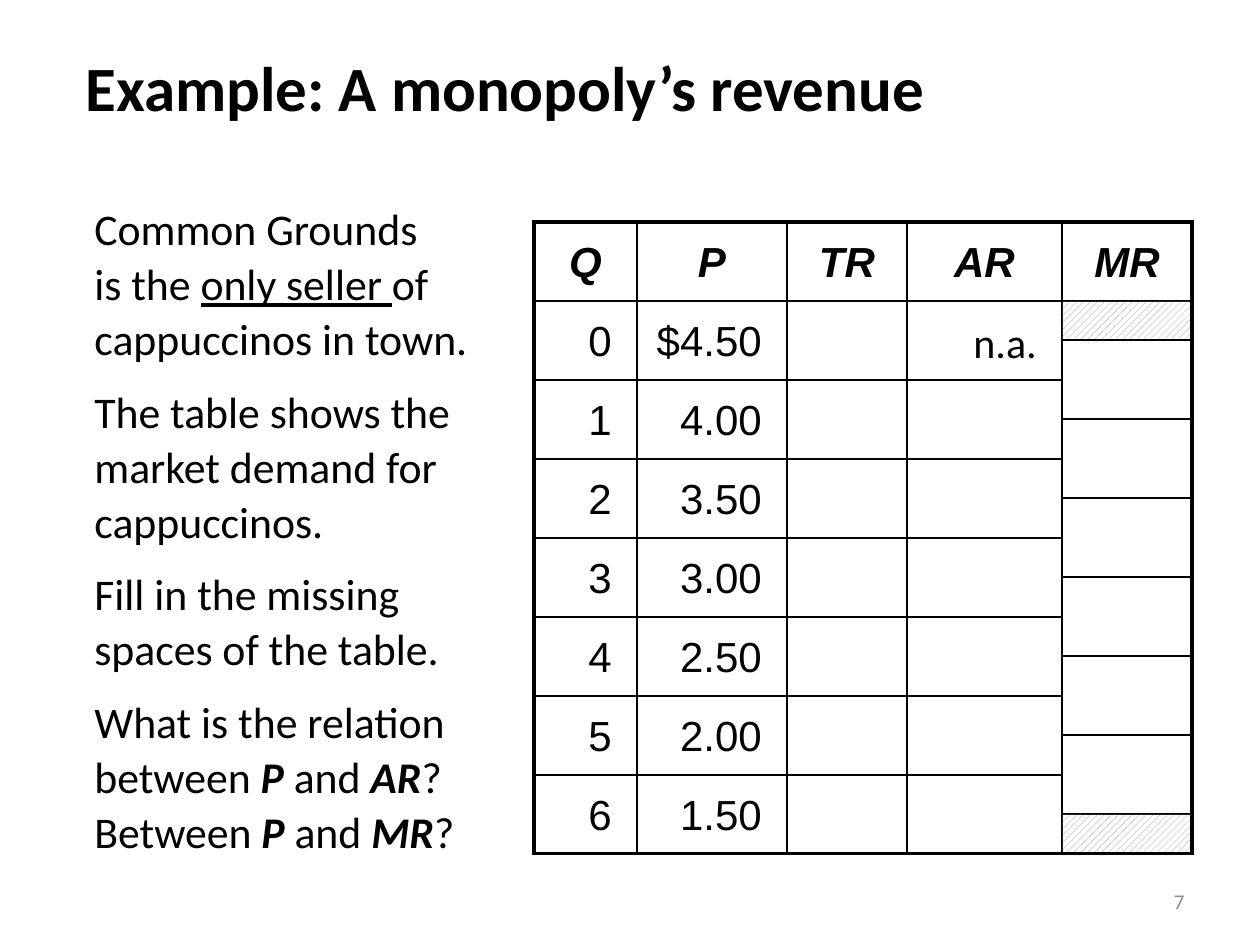
import pptx
import pptx.util
import pptx.oxml
from pptx.dml.color import RGBColor
from pptx.enum.dml import MSO_PATTERN
from pptx.enum.shapes import MSO_SHAPE
from pptx.enum.text import MSO_ANCHOR, PP_ALIGN
from pptx.oxml.ns import nsdecls

PX = 914400 / 126
COLORS = {"ink": "000000", "paper": "FFFFFF", "hatch": "969696", "number": "8C8C8C"}

TITLE = "Example: A monopoly’s revenue"
# Each paragraph is a list of (text, style): "u" underlined, "bi" bold italic
BODY = [
    [("Common Grounds \nis the ", ""), ("only seller ", "u"),
     ("of cappuccinos in town.", "")],
    [("The table shows the market demand for cappuccinos.", "")],
    [("Fill in the missing spaces of the table.", "")],
    [("What is the relation between ", ""), ("P", "bi"), (" and ", ""), ("AR", "bi"),
     ("? Between ", ""), ("P", "bi"), (" and ", ""), ("MR", "bi"), ("?", "")],
]
HEADERS = ["Q", "P", "TR", "AR", "MR"]
PRICES = ["$4.50", "4.00", "3.50", "3.00", "2.50", "2.00", "1.50"]

TABLE_LEFT, TABLE_TOP = 534, 222
COL_WIDTHS = [103, 150, 120, 155, 130]
ROW_H = 79
THIN, THICK = 1, 2.25


def px(n):
    return pptx.util.Emu(round(n * PX))


def box(*values):
    return [px(v) for v in values]


def rgb(name):
    return RGBColor.from_string(COLORS[name])


def style(p, size, font="Calibri", color="ink", align=PP_ALIGN.LEFT, bold=False,
          italic=False, before=None):
    p.font.size, p.font.name = pptx.util.Pt(size), font
    p.font.bold, p.font.italic = bold, italic
    p.font.color.rgb = rgb(color)
    p.alignment = align
    if before is not None:
        p.line_spacing = 1.05
        p.space_before = pptx.util.Pt(before)


def text_box(slide, bounds, anchor=MSO_ANCHOR.MIDDLE):
    tf = slide.shapes.add_textbox(*box(*bounds)).text_frame
    tf.word_wrap = True
    tf.vertical_anchor = anchor
    return tf


def add_line(slide, bounds, text, **font):
    """Add a text box that holds one paragraph."""
    tf = text_box(slide, bounds)
    p = tf.paragraphs[0]
    p.text = text
    style(p, **font)
    return tf


def add_body(slide):
    tf = text_box(slide, (82, 193, 447, 731), MSO_ANCHOR.TOP)
    for i, parts in enumerate(BODY):
        p = tf.add_paragraph() if i else tf.paragraphs[0]
        style(p, 25, before=10)
        for text, look in parts:
            for j, line in enumerate(text.split("\n")):
                if j:
                    p.add_line_break()
                r = p.add_run()
                r.text = line
                if look == "u":
                    r.font.underline = True
                elif look == "bi":
                    r.font.bold = r.font.italic = True


def set_borders(cell, **widths):
    """Set border widths in points, given as L, R, T and B in that order."""
    tc_pr = cell._tc.get_or_add_tcPr()
    for i, (side, width) in enumerate(widths.items()):
        tc_pr.insert(i, pptx.oxml.parse_xml(
            f'<a:ln{side} {nsdecls("a")} w="{round(width * 12700)}"><a:solidFill>'
            f'<a:srgbClr val="{COLORS["ink"]}"/></a:solidFill></a:ln{side}>'))


def add_revenue_table(slide):
    rows = [HEADERS] + [[str(q), price, "", "", ""] for q, price in enumerate(PRICES)]
    last_row, last_col = len(rows) - 1, len(HEADERS) - 1
    table = slide.shapes.add_table(
        len(rows), len(HEADERS),
        *box(TABLE_LEFT, TABLE_TOP, sum(COL_WIDTHS), ROW_H * len(rows))).table
    table.first_row = table.horz_banding = False
    for col, width in zip(table.columns, COL_WIDTHS):
        col.width = px(width)
    for i, values in enumerate(rows):
        table.rows[i].height = px(ROW_H)
        for j, value in enumerate(values):
            cell = table.cell(i, j)
            cell.fill.background()
            cell.vertical_anchor = MSO_ANCHOR.MIDDLE
            set_borders(cell, L=THIN if j else THICK,
                        R=THICK if j == last_col else THIN,
                        T=THIN if i else THICK,
                        B=THICK if i == last_row else THIN)
            header = i == 0
            if not header:
                cell.margin_right = pptx.util.Inches(0.2)
            p = cell.text_frame.paragraphs[0]
            p.text = value
            style(p, 24, "Arial", bold=header, italic=header, before=11,
                  align=PP_ALIGN.CENTER if header else PP_ALIGN.RIGHT)


def add_rect(shapes, bounds):
    sp = shapes.add_shape(MSO_SHAPE.RECTANGLE, *box(*bounds))
    sp.shadow.inherit = False
    return sp


def add_mr_column(slide):
    """Cover the MR cells with boxes half a row lower, hatched at both ends."""
    left = TABLE_LEFT + sum(COL_WIDTHS[:-1])
    top = TABLE_TOP + ROW_H * 3 // 2
    count = len(PRICES) - 1
    group = slide.shapes.add_group_shape()
    for i in range(count):
        sp = add_rect(group.shapes, (left, top + i * ROW_H, 129, ROW_H))
        sp.fill.solid()
        sp.fill.fore_color.rgb = rgb("paper")
        sp.line.color.rgb = rgb("ink")
        sp.line.width = pptx.util.Pt(THIN)
    for y in (top - 38, top + count * ROW_H + 1):
        sp = add_rect(slide.shapes, (left + 1, y, 127, 37))
        sp.fill.patterned()
        sp.fill.pattern = MSO_PATTERN.WIDE_UPWARD_DIAGONAL
        sp.fill.fore_color.rgb = rgb("hatch")
        sp.fill.back_color.rgb = rgb("paper")
        sp.line.fill.background()


def main():
    prs = pptx.Presentation()
    prs.slide_width, prs.slide_height = px(1260), px(945)
    slide = prs.slides.add_slide(prs.slide_layouts[6])
    add_line(slide, (73, 21, 1131, 131), TITLE, size=36, bold=True)
    add_revenue_table(slide)
    add_mr_column(slide)
    ar_left = TABLE_LEFT + sum(COL_WIDTHS[:3])
    tf = add_line(slide, (ar_left, TABLE_TOP + ROW_H, COL_WIDTHS[3], ROW_H), "n.a.",
                  size=24, align=PP_ALIGN.RIGHT, before=11)
    tf.margin_right = pptx.util.Inches(0.2)
    add_body(slide)
    add_line(slide, (903, 876, 294, 50), "7", size=12, color="number",
             align=PP_ALIGN.RIGHT)
    prs.save("out.pptx")


if __name__ == "__main__":
    main()
